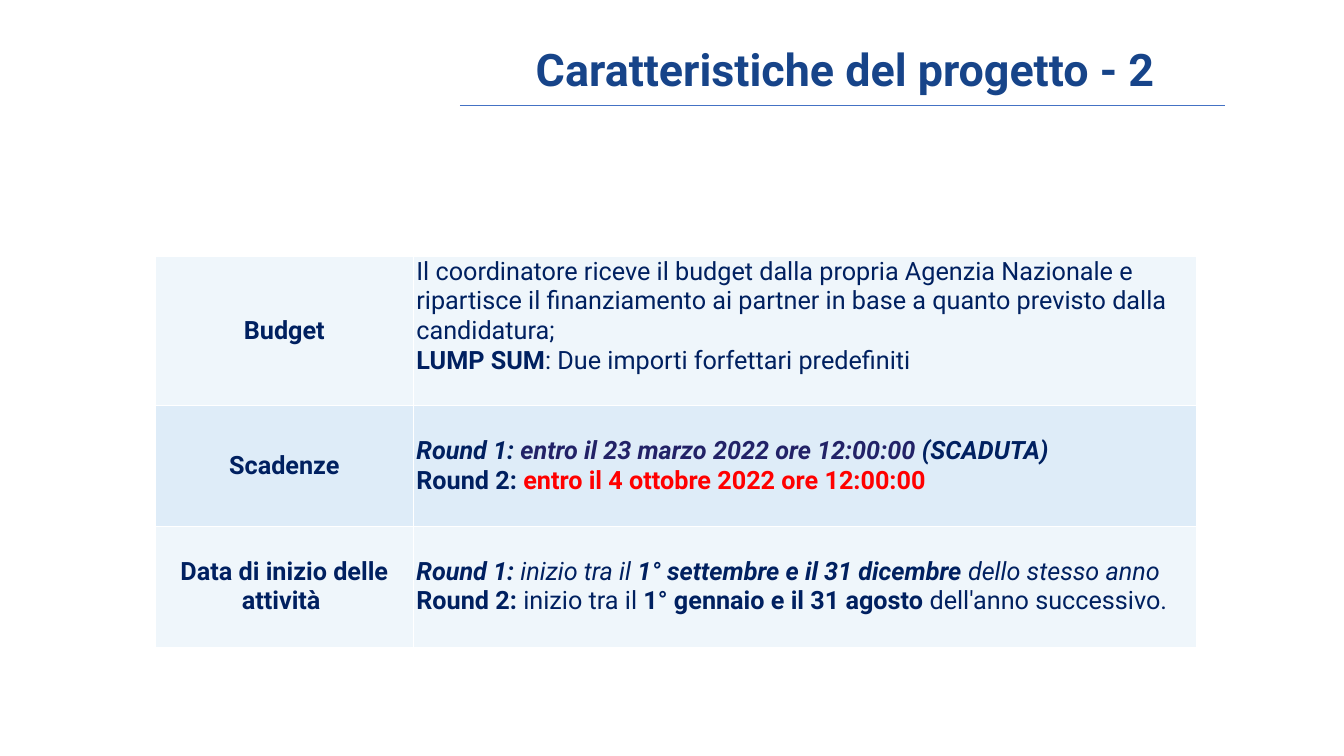
from dataclasses import dataclass
from itertools import cycle

from lxml.etree import SubElement
from pptx import Presentation
from pptx.dml.color import RGBColor
from pptx.enum.shapes import MSO_CONNECTOR as Connector
from pptx.enum.text import MSO_ANCHOR as Anchor, PP_ALIGN as Align
from pptx.oxml.ns import qn
from pptx.util import Inches, Pt


@dataclass(frozen=True)
class Theme:
    font: str = "Roboto"
    title: str = "174489"
    text: str = "002060"
    past: str = "222267"
    alert: str = "FF0000"
    rule: str = "4472C4"
    border: str = "FFFFFF"
    bands: tuple[str, str] = ("EFF6FB", "DEECF8")
    title_size: int = 32
    body_size: int = 18
    line_width: float = 0.5


THEME = Theme()


@dataclass(frozen=True)
class Run:
    text: str
    bold: bool = False
    italic: bool = False
    color: str = THEME.text


@dataclass(frozen=True)
class Row:
    label: str
    lines: list[list[Run]]
    height: float
    anchor: Anchor = Anchor.MIDDLE


COLUMNS = (2.56, 7.77)
TABLE_LEFT, TABLE_TOP = 1.54, 2.54
ROWS = [
    Row("Budget", [
        [Run("Il coordinatore riceve il budget dalla propria Agenzia Nazionale e "
             "ripartisce il finanziamento ai partner in base a quanto previsto "
             "dalla candidatura;")],
        [Run("LUMP SUM", bold=True), Run(": Due importi forfettari predefiniti")],
    ], 1.48, Anchor.TOP),
    Row("Scadenze", [
        [Run("Round 1: ", True, True),
         Run("entro il 23 marzo 2022 ore 12:00:00 ", True, True, THEME.past),
         Run("(SCADUTA)", True, True)],
        [Run("Round 2: ", True),
         Run("entro il 4 ottobre 2022 ore 12:00:00", True, color=THEME.alert)],
    ], 1.2),
    Row("Data di inizio delle attività ", [
        [Run("Round 1:", True, True), Run(" inizio tra il ", italic=True),
         Run("1° settembre e il 31 dicembre ", True, True),
         Run("dello stesso anno", italic=True)],
        [Run("Round 2:", True), Run(" inizio tra il "),
         Run("1° gennaio e il 31 agosto ", True), Run("dell'anno successivo.")],
    ], 1.2),
]


def add_run(p, run: Run, size: int = THEME.body_size) -> None:
    r = p.add_run()
    r.text = run.text
    formats = {"name": THEME.font, "size": Pt(size),
               "bold": run.bold, "italic": run.italic}
    for name, value in formats.items():
        setattr(r.font, name, value)
    r.font.color.rgb = RGBColor.from_string(run.color)


def add_borders(cell) -> None:
    """Insert the four cell edges ahead of the fill, as the schema requires."""
    tc_pr = cell._tc.get_or_add_tcPr()
    for i, side in enumerate(("lnL", "lnR", "lnT", "lnB")):
        ln = SubElement(tc_pr, qn(f"a:{side}"), w=str(Pt(THEME.line_width)))
        fill = SubElement(ln, qn("a:solidFill"))
        SubElement(fill, qn("a:srgbClr"), val=THEME.border)
        tc_pr.insert(i, ln)


def fill_cell(cell, lines: list[list[Run]], band: str,
              anchor: Anchor, align: Align) -> None:
    formats = {"margin_left": Inches(0.03), "margin_right": Inches(0.03),
               "margin_top": Inches(0.01), "margin_bottom": Inches(0.01),
               "vertical_anchor": anchor}
    for name, value in formats.items():
        setattr(cell, name, value)
    cell.fill.solid()
    cell.fill.fore_color.rgb = RGBColor.from_string(band)
    add_borders(cell)
    tf = cell.text_frame
    for i, line in enumerate(lines):
        p = tf.add_paragraph() if i else tf.paragraphs[0]
        p.alignment = align
        for run in line:
            add_run(p, run)


def add_title(s) -> None:
    sp = s.shapes.title
    box = {"left": 4.48, "top": 0.2, "width": 7.81, "height": 0.96}
    for name, value in box.items():
        setattr(sp, name, Inches(value))
    tf = sp.text_frame
    tf.vertical_anchor = Anchor.MIDDLE
    p = tf.paragraphs[0]
    p.alignment = Align.CENTER
    add_run(p, Run("Caratteristiche del progetto - 2", True, color=THEME.title),
            THEME.title_size)


def add_rule(s) -> None:
    ends = (Inches(v) for v in (4.56, 1.05, 12.15, 1.05))
    rule = s.shapes.add_connector(Connector.STRAIGHT, *ends)
    rule.line.width = Pt(THEME.line_width)
    rule.line.color.rgb = RGBColor.from_string(THEME.rule)
    SubElement(rule._element.spPr, qn("a:effectLst"))


def add_project_table(s) -> None:
    size = (sum(COLUMNS), sum(row.height for row in ROWS))
    frame = (Inches(v) for v in (TABLE_LEFT, TABLE_TOP, *size))
    table = s.shapes.add_table(len(ROWS), len(COLUMNS), *frame).table
    table.first_row = table.horz_banding = False
    for column, width in zip(table.columns, COLUMNS):
        column.width = Inches(width)
    for i, (row, band) in enumerate(zip(ROWS, cycle(THEME.bands))):
        table.rows[i].height = Inches(row.height)
        fill_cell(table.cell(i, 0), [[Run(row.label, True)]], band,
                  Anchor.MIDDLE, Align.CENTER)
        fill_cell(table.cell(i, 1), row.lines, band, row.anchor, Align.LEFT)


def main() -> None:
    prs = Presentation()
    prs.slide_width, prs.slide_height = Inches(13.33), Inches(7.5)
    s = prs.slides.add_slide(prs.slide_layouts[5])
    # Heading
    add_title(s)
    add_rule(s)
    # Project details
    add_project_table(s)
    prs.save("out.pptx")


if __name__ == "__main__":
    main()
